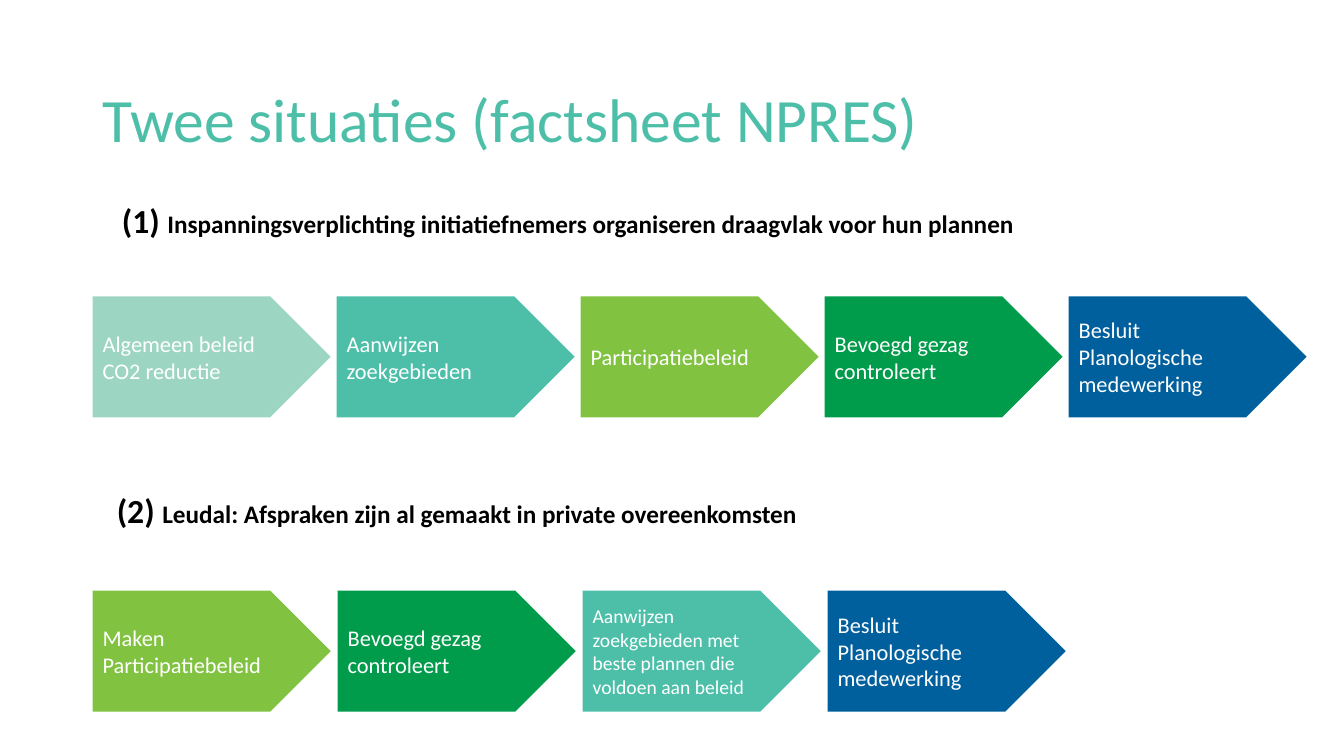
from dataclasses import dataclass

from pptx import Presentation
from pptx.dml.color import RGBColor
from pptx.enum.shapes import MSO_SHAPE as Shape
from pptx.enum.text import MSO_ANCHOR as Anchor, PP_ALIGN as Align
from pptx.util import Inches, Pt


@dataclass(frozen=True)
class Theme:
    font: str = "Calibri"
    mint: str = "9DD5C3"
    teal: str = "4DBFA9"
    lime: str = "81C241"
    green: str = "009B4B"
    blue: str = "00609E"
    black: str = "000000"
    white: str = "FFFFFF"
    title_size: int = 44
    number_size: int = 24
    heading_size: int = 18
    step_size: int = 16
    small_size: int = 14


THEME = Theme()
STEP_WIDTH, STEP_HEIGHT = 2.36, 1.2


def style(font, size, color, bold=False):
    font.name = THEME.font
    font.size = Pt(size)
    font.bold = bold
    font.color.rgb = RGBColor.from_string(color)


def add_text_box(page, left, top, width, height):
    box = page.shapes.add_textbox(Inches(left), Inches(top), Inches(width), Inches(height))
    box.text_frame.word_wrap = True
    return box.text_frame


def add_title(page, left, top, width, height, text):
    frame = add_text_box(page, left, top, width, height)
    frame.vertical_anchor = Anchor.TOP
    frame.text = text
    para = frame.paragraphs[0]
    para.line_spacing = 0.9
    style(para.runs[0].font, THEME.title_size, THEME.teal)


def add_heading(page, left, top, width, height, number, text):
    para = add_text_box(page, left, top, width, height).paragraphs[0]
    for words, size in ((number, THEME.number_size), (text, THEME.heading_size)):
        span = para.add_run()
        span.text = words
        style(span.font, size, THEME.black, bold=True)


def add_step(page, left, top, text, color, size):
    step = page.shapes.add_shape(Shape.PENTAGON, Inches(left), Inches(top),
                                 Inches(STEP_WIDTH), Inches(STEP_HEIGHT))
    step.shadow.inherit = False
    step.fill.solid()
    step.fill.fore_color.rgb = RGBColor.from_string(color)
    step.line.fill.background()
    frame = step.text_frame
    frame.word_wrap = True
    frame.vertical_anchor = Anchor.MIDDLE
    frame.text = text
    for para in frame.paragraphs:
        para.alignment = Align.LEFT
        style(para.runs[0].font, size, THEME.white)


def add_process(page, left, top, pitch, steps):
    for index, (text, color, size) in enumerate(steps):
        add_step(page, left + index * pitch, top, text, color, size)


def main():
    deck = Presentation()
    deck.slide_width, deck.slide_height = Inches(13.33), Inches(7.5)
    page = deck.slides.add_slide(deck.slide_layouts[6])

    control = ("Bevoegd gezag controleert", THEME.green, THEME.step_size)
    decision = ("Besluit\nPlanologische medewerking", THEME.blue, THEME.step_size)

    add_title(page, 0.92, 0.84, 11.5, 1.45, "Twee situaties (factsheet NPRES)")

    add_heading(page, 1.11, 1.93, 10.52, 0.5, "(1) ",
                "Inspanningsverplichting initiatiefnemers organiseren draagvlak voor hun plannen")
    add_process(page, 0.92, 2.94, 2.42, [
        ("Algemeen beleid\nCO2 reductie", THEME.mint, THEME.step_size),
        ("Aanwijzen zoekgebieden", THEME.teal, THEME.step_size),
        ("Participatiebeleid", THEME.lime, THEME.step_size),
        control,
        decision,
    ])

    add_heading(page, 1.06, 4.81, 10.61, 0.91, "(2) ",
                "Leudal: Afspraken zijn al gemaakt in private overeenkomsten")
    add_process(page, 0.92, 5.86, 2.43, [
        ("Maken\nParticipatiebeleid", THEME.lime, THEME.step_size),
        control,
        ("Aanwijzen zoekgebieden met beste plannen die voldoen aan beleid",
         THEME.teal, THEME.small_size),
        decision,
    ])

    deck.save("out.pptx")


if __name__ == "__main__":
    main()
